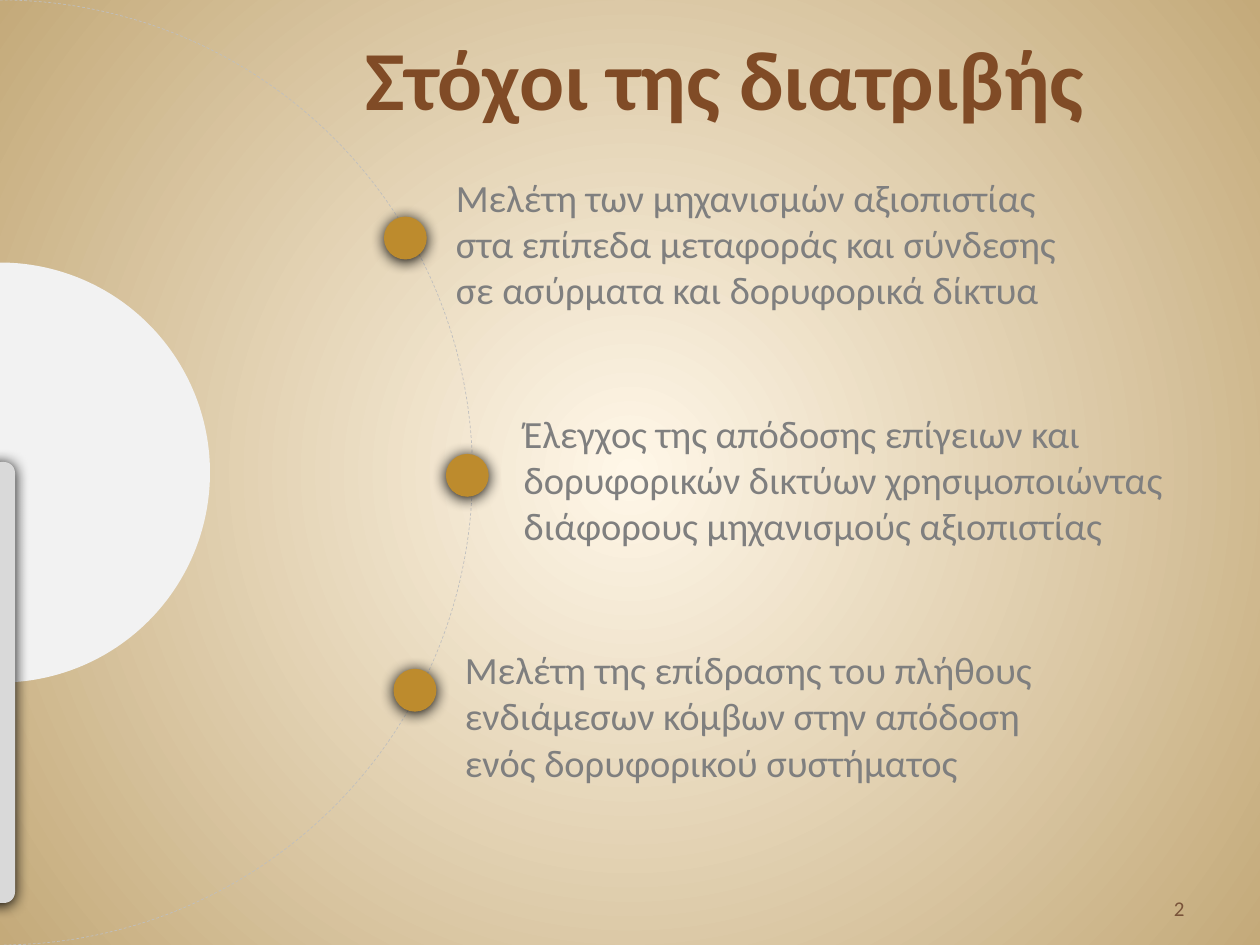
from lxml import etree
from pptx import Presentation
from pptx.dml.color import RGBColor
from pptx.enum.dml import MSO_LINE
from pptx.enum.shapes import MSO_SHAPE
from pptx.enum.text import MSO_ANCHOR, MSO_AUTO_SIZE, PP_ALIGN
from pptx.oxml.ns import qn
from pptx.util import Pt

ARC = MSO_SHAPE.ARC
OVAL = MSO_SHAPE.OVAL
ROUNDED = MSO_SHAPE.ROUNDED_RECTANGLE
DASH = MSO_LINE.DASH
LEFT, RIGHT = PP_ALIGN.LEFT, PP_ALIGN.RIGHT
TOP, BOTTOM = MSO_ANCHOR.TOP, MSO_ANCHOR.BOTTOM
GROW, FIXED = MSO_AUTO_SIZE.SHAPE_TO_FIT_TEXT, MSO_AUTO_SIZE.NONE

WIDTH, HEIGHT = 720, 540
DOT = 24.5
GOAL_TOP, GOAL_STEP, GOAL_HEIGHT = 95.8, 135, 87.2
GOALS = [
    ("Μελέτη των μηχανισμών αξιοπιστίας στα επίπεδα μεταφοράς και σύνδεσης "
     "σε ασύρματα και δορυφορικά δίκτυα", 253.4, 360, 219.4, 123.8),
    ("Έλεγχος της απόδοσης επίγειων και δορυφορικών δικτύων χρησιμοποιώντας "
     "διάφορους μηχανισμούς αξιοπιστίας", 292.2, 382.5, 254.8, 259.4),
    ("Μελέτη της επίδρασης του πλήθους ενδιάμεσων κόμβων στην απόδοση ενός "
     "δορυφορικού συστήματος", 258.6, 376.6, 224.9, 382.2),
]


def color(value):
    return RGBColor.from_string(value)


class Deck:
    font = "Calibri"
    body = "7F7F7F"
    accent = "BD8B2D"

    def __init__(self):
        self.prs = Presentation()
        self.prs.slide_width, self.prs.slide_height = Pt(WIDTH), Pt(HEIGHT)
        self.s = self.prs.slides.add_slide(self.prs.slide_layouts[6])

    def background(self, inner, outer):
        fill = self.s.background.fill
        fill.gradient()
        for stop, value, position in zip(fill.gradient_stops, (inner, outer), (0, 1)):
            stop.color.rgb = color(value)
            stop.position = position
        grad = next(self.s.element.iter(qn("a:gradFill")))
        grad.remove(grad.find(qn("a:lin")))
        path = etree.SubElement(grad, qn("a:path"), path="circle")
        etree.SubElement(path, qn("a:fillToRect"), l="50000", t="50000", r="50000", b="50000")

    def shape(self, kind, x, y, w, h, fill=None, adj=(), shadow=False):
        sp = self.s.shapes.add_shape(kind, Pt(x), Pt(y), Pt(w), Pt(h))
        for i, value in enumerate(adj):
            sp.adjustments[i] = value
        if fill:
            sp.fill.solid()
            sp.fill.fore_color.rgb = color(fill)
        else:
            sp.fill.background()
        sp.line.fill.background()
        sp.shadow.inherit = False
        if shadow:
            self.shadow(sp)
        return sp

    def shadow(self, sp):
        effects = next(sp.element.iter(qn("a:effectLst")))
        outer = etree.SubElement(effects, qn("a:outerShdw"), blurRad=str(Pt(8.5)),
                                 dist=str(Pt(1)), dir="5400000", rotWithShape="0")
        etree.SubElement(outer, qn("a:srgbClr"), val="000000")

    def arc_line(self, x, y, size, adj, line, width):
        sp = self.shape(ARC, x, y, size, size, adj=adj)
        sp.line.color.rgb = color(line)
        sp.line.width = Pt(width)
        sp.line.dash_style = DASH

    def text(self, text, x, y, w, h, size=22, fill=body, bold=False,
             align=LEFT, anchor=TOP, fit=GROW):
        tf = self.s.shapes.add_textbox(Pt(x), Pt(y), Pt(w), Pt(h)).text_frame
        tf.word_wrap = True
        tf.auto_size = fit
        tf.vertical_anchor = anchor
        tf.text = text
        p = tf.paragraphs[0]
        p.alignment = align
        r = p.runs[0]
        r.font.name = self.font
        r.font.size = Pt(size)
        r.font.bold = bold
        r.font.color.rgb = color(fill)


def main():
    deck = Deck()
    deck.background("FFF7E8", "C4AA7A")
    deck.arc_line(-270, 0, HEIGHT, (162, 53.71), "BFBFBF", 0.39)
    deck.shape(ARC, -120, 150, 240, 240, "F2F2F2", (162, 53.6))
    bar = deck.shape(ROUNDED, -9.4, 264, 18, 252, "D9D9D9", (0.35,), shadow=True)
    bar.rotation = 180
    for i, (goal, x, w, _, _) in enumerate(GOALS):
        deck.text(goal, x, GOAL_TOP + i * GOAL_STEP, w, GOAL_HEIGHT)
    for _, _, _, x, y in GOALS:
        deck.shape(OVAL, x, y, DOT, DOT, deck.accent, shadow=True)
    deck.text("Στόχοι της διατριβής", 202, 11.5, 456, 65.5, 48, "804B26", bold=True)
    deck.text("2", 516, 492, 168, 37.5, 12, "795339", align=RIGHT, anchor=BOTTOM, fit=FIXED)
    deck.prs.save("out.pptx")


if __name__ == "__main__":
    main()
